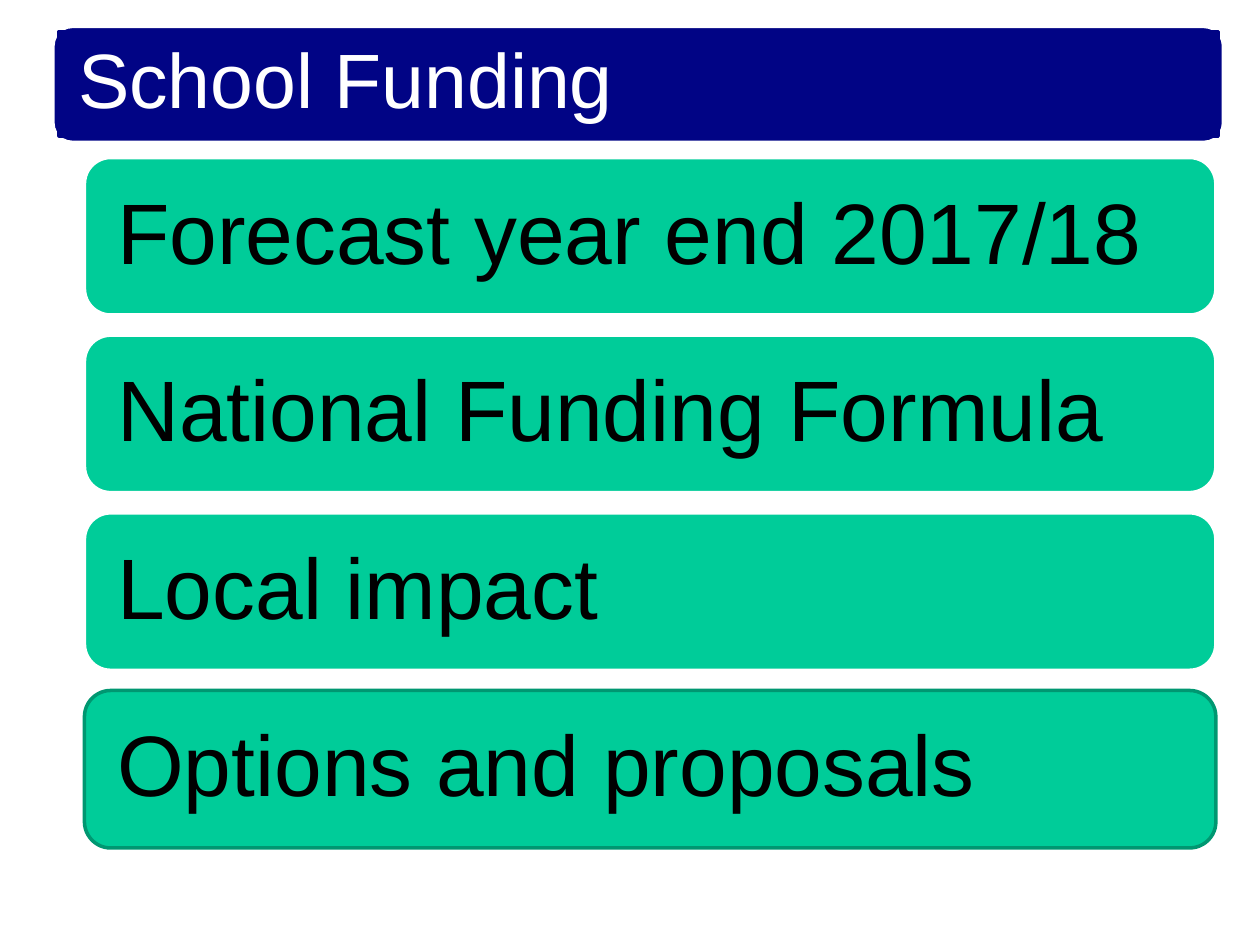
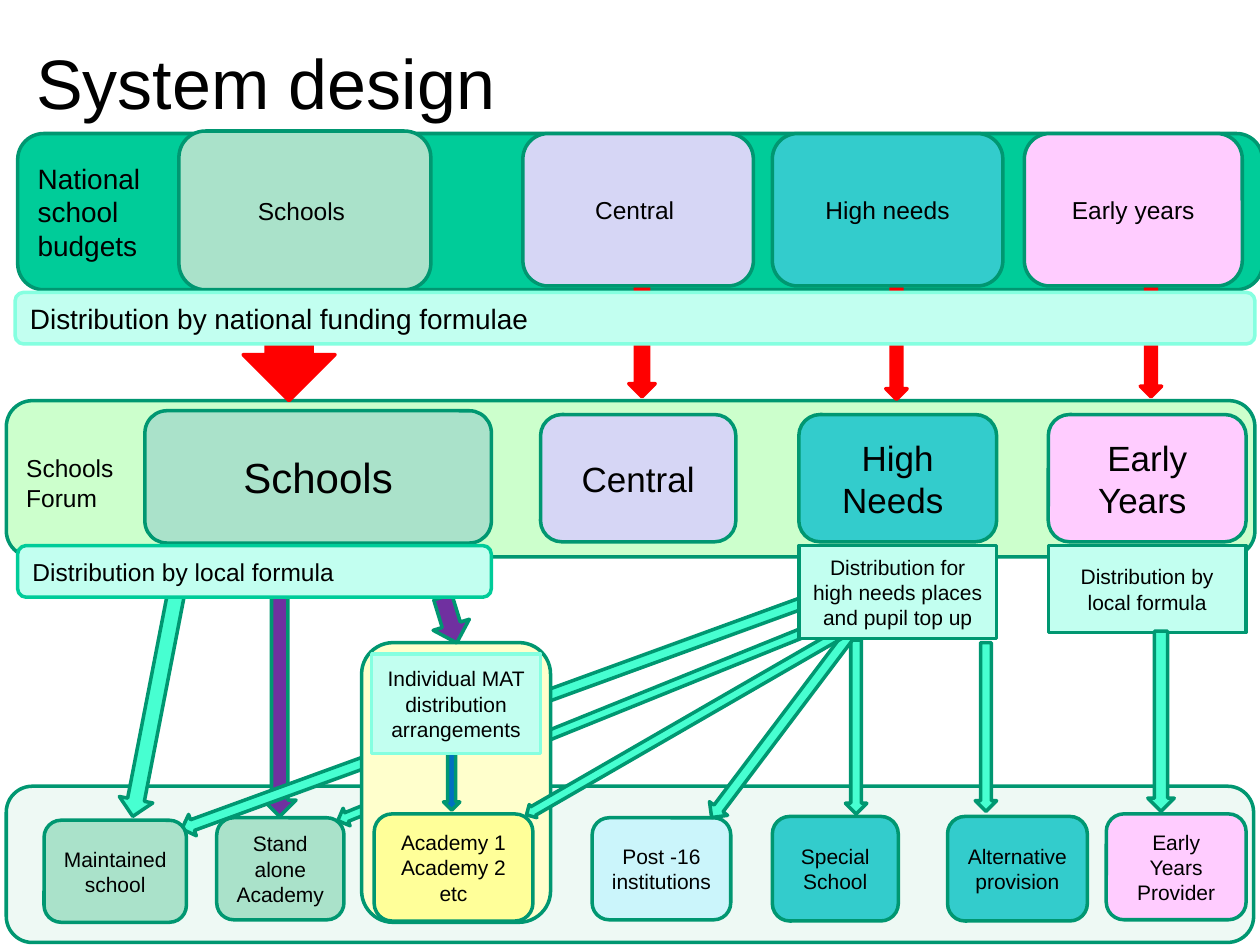
from pptx import Presentation
from pptx.dml.color import RGBColor
from pptx.enum.shapes import MSO_SHAPE
from pptx.enum.text import MSO_ANCHOR, PP_ALIGN
from pptx.util import Inches, Pt

ROUND = MSO_SHAPE.ROUNDED_RECTANGLE
RECT = MSO_SHAPE.RECTANGLE
DOWN = MSO_SHAPE.DOWN_ARROW
MIDDLE = MSO_ANCHOR.MIDDLE
LEFT, CENTER = PP_ALIGN.LEFT, PP_ALIGN.CENTER

FONT = "Arial"
BLACK, WHITE, NAVY = "000000", "FFFFFF", "010485"
GREEN, OUTLINE, SAGE = "00CC99", "009771", "AAE2CA"
MINT, MINT_EDGE, AQUA = "C2FFF0", "85FFE0", "47FFD1"
LILAC, TEAL, PINK = "D6D6F5", "33CCCC", "FFCCFF"
RED, PURPLE, BLUE = "FF0000", "7030A0", "0070C0"


def color(hex_text):
    return RGBColor.from_string(hex_text)


class Slides:
    """Holds the deck, its style and the current page."""

    def __init__(self):
        self.deck = Presentation()
        self.deck.slide_width, self.deck.slide_height = Inches(10), Inches(7.5)
        self.page = None

    def new_page(self):
        self.page = self.deck.slides.add_slide(self.deck.slide_layouts[6])

    def shape(self, kind, at, fill, line=OUTLINE):
        shape = self.page.shapes.add_shape(kind, *map(Inches, at))
        shape.shadow.inherit = False
        shape.fill.solid()
        shape.fill.fore_color.rgb = color(fill)
        shape.line.color.rgb = color(line)
        shape.line.width = Pt(2)
        return shape

    def set_text(self, shape, text, size, align, ink=BLACK, inset=None, spacing=None):
        frame = shape.text_frame
        frame.word_wrap = True
        frame.vertical_anchor = MIDDLE
        if inset is not None:
            frame.margin_left = frame.margin_right = Inches(inset)
            frame.margin_top = frame.margin_bottom = Inches(inset)
        for index, line in enumerate(text.split("\n")):
            para = frame.add_paragraph() if index else frame.paragraphs[0]
            para.text = line
            para.alignment = align
            para.line_spacing = spacing
            para.font.name = FONT
            para.font.size = Pt(size)
            para.font.color.rgb = color(ink)

    def box(self, at, fill, text, size, line=OUTLINE, kind=ROUND, align=CENTER, **style):
        self.set_text(self.shape(kind, at, fill, line), text, size, align, **style)

    def label(self, at, text, size):
        self.set_text(self.page.shapes.add_textbox(*map(Inches, at)), text, size, LEFT)

    def arrow(self, at, fill, line=OUTLINE, turn=0, shaft=0.5):
        arrow = self.shape(DOWN, at, fill, line)
        arrow.rotation = turn
        arrow.adjustments[0] = shaft


def agenda_page(slides):
    slides.new_page()
    topics = ["Forecast year end 2017/18", "National Funding Formula",
              "Local impact", "Options and proposals"]
    for index, topic in enumerate(topics):
        edge = OUTLINE if topic == topics[-1] else WHITE
        slides.box((0.67, 1.25 + index * 1.41, 8.98, 1.25), GREEN, topic, 49,
                   line=edge, align=LEFT, inset=0.2, spacing=0.9)

    # Title band
    slides.shape(ROUND, (0.42, 0.21, 9.29, 0.92), NAVY, WHITE)
    slides.box((0.47, 0.25, 9.2, 0.83), NAVY, "School Funding", 44, line=NAVY,
               kind=RECT, align=LEFT, ink=WHITE, inset=0.15, spacing=0.9)


def system_page(slides):
    slides.new_page()

    # Provider band, and the arrows that pass behind the trust panel
    slides.shape(ROUND, (0.05, 6.24, 9.9, 1.24), "EEF9F4")
    slides.arrow((2.09, 4.63, 0.26, 1.85), PURPLE)
    slides.arrow((4.47, 3.75, 0.15, 4.02), AQUA, turn=68)
    slides.arrow((3.81, 3.07, 0.18, 5.23), AQUA, turn=70)
    slides.shape(ROUND, (2.87, 5.1, 1.5, 2.22), "FFFFCC")

    # Forum and national bands
    slides.shape(ROUND, (0.05, 3.18, 9.91, 1.24), "CCFFCC")
    slides.label((0.11, 3.29, 1.04, 1.08), "Schools Forum", 14)
    slides.box((0.14, 1.06, 9.88, 1.24), GREEN, "National\nschool\nbudgets", 16, align=LEFT)
    slides.label((0.19, 0.29, 9.06, 0.71), "System design", 40)

    # Providers
    for left, top, width, height, fill, name in [
        (0.35, 6.51, 1.13, 0.81, SAGE, "Maintained school"),
        (1.72, 6.49, 1.01, 0.81, SAGE, "Stand alone Academy"),
        (2.97, 6.46, 1.26, 0.85, "FFFF99", "Academy 1\nAcademy 2\netc"),
        (4.7, 6.49, 1.1, 0.81, "CBF5FB", "Post -16 institutions"),
        (6.13, 6.48, 1, 0.83, TEAL, "Special School"),
        (7.52, 6.48, 1.11, 0.83, TEAL, "Alternative provision"),
        (8.78, 6.46, 1.11, 0.84, PINK, "Early Years Provider"),
    ]:
        slides.box((left, top, width, height), fill, name, 12)

    # National funding arrows
    for at in [(1.93, 2.32, 0.73, 0.86), (4.99, 2.08, 0.21, 1.07),
               (7.03, 2.16, 0.17, 1.01), (9.05, 2.11, 0.17, 1.04)]:
        slides.arrow(at, RED, RED)

    # National budgets
    slides.box((1.42, 1.04, 2, 1.26), SAGE, "Schools ", 14)
    for left, width, fill, name in [(4.15, 1.83, LILAC, "Central "),
                                    (6.13, 1.83, TEAL, "High needs"),
                                    (8.13, 1.73, PINK, "Early years")]:
        slides.box((left, 1.06, width, 1.21), fill, name, 14)
    slides.box((0.12, 2.32, 9.84, 0.41), MINT, "Distribution by national funding formulae",
               16, line=MINT_EDGE, align=LEFT)

    # Forum blocks
    for left, width, fill, name in [(4.29, 1.55, LILAC, "Central"),
                                    (6.34, 1.57, TEAL, "High Needs "),
                                    (8.32, 1.57, PINK, "Early Years ")]:
        slides.box((left, 3.29, width, 1.01), fill, name, 20)

    # Early years and high needs distribution
    slides.box((8.32, 4.33, 1.57, 0.69), MINT, "Distribution by local formula", 12, kind=RECT)
    for at in [(9.11, 5.01, 0.21, 1.43), (7.74, 5.1, 0.17, 1.34), (6.71, 5.08, 0.17, 1.38)]:
        slides.arrow(at, AQUA)
    slides.arrow((6.1, 4.87, 0.18, 1.8), AQUA, turn=37)
    slides.arrow((5.37, 4.3, 0.12, 2.89), AQUA, turn=60, shaft=0.65)
    slides.box((6.34, 4.33, 1.57, 0.74), MINT,
               "Distribution for high needs places and pupil top up", 12, kind=RECT)

    # Trust distribution
    slides.arrow((3.52, 5.96, 0.13, 0.47), BLUE)
    slides.box((2.95, 5.19, 1.34, 0.79), MINT, "Individual MAT distribution arrangements",
               12, line=MINT_EDGE, kind=RECT)

    # Schools block and its local formula
    slides.arrow((3.42, 4.73, 0.3, 0.38), PURPLE, turn=343)
    slides.arrow((1.13, 4.29, 0.27, 2.21), AQUA, turn=11)
    slides.box((1.15, 3.26, 2.75, 1.05), SAGE, "Schools", 24)
    slides.box((0.14, 4.33, 3.76, 0.41), MINT, "Distribution by local formula", 14,
               line=GREEN, align=LEFT)


def main():
    slides = Slides()
    agenda_page(slides)
    system_page(slides)
    slides.deck.save("out.pptx")


if __name__ == "__main__":
    main()
